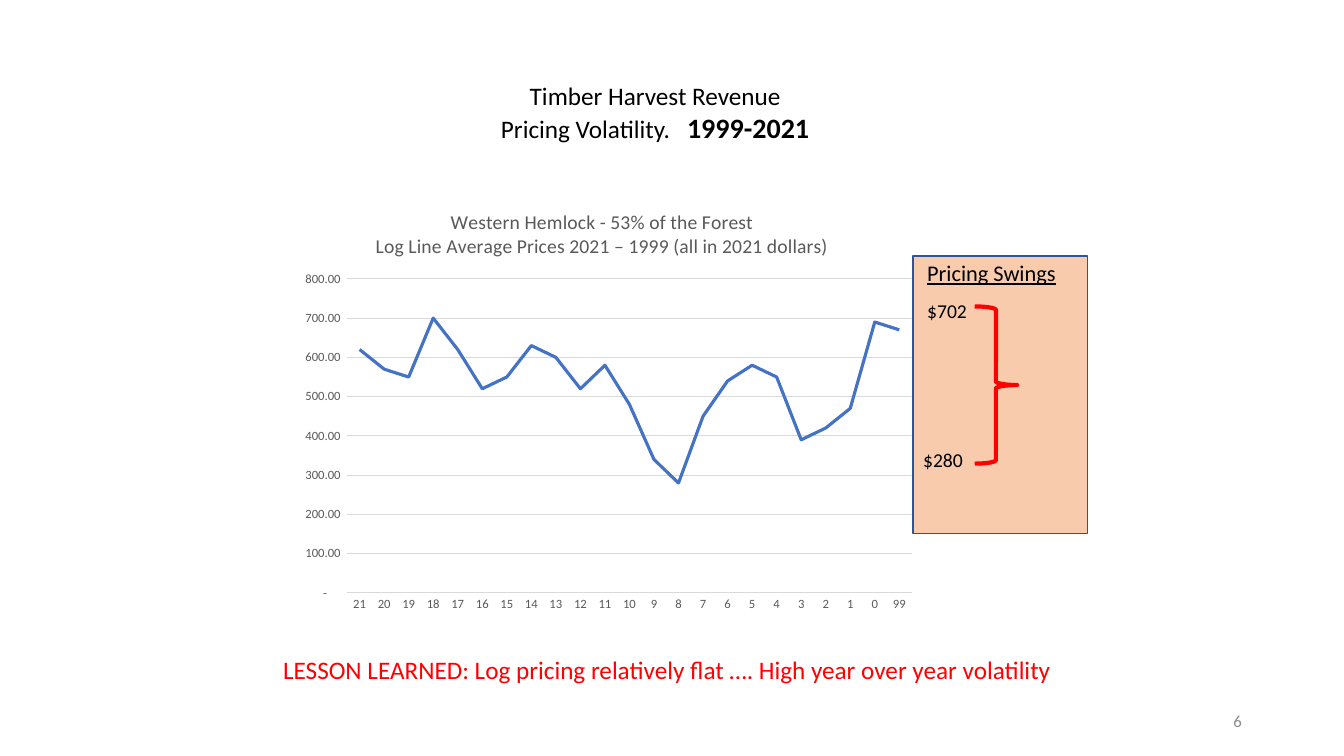
"""Build the timber price volatility slide."""
import pptx
import pptx.chart.data
import pptx.dml.color
import pptx.enum.chart
import pptx.enum.dml
import pptx.enum.shapes
import pptx.enum.text
import pptx.oxml
import pptx.oxml.ns
import pptx.util

RGB = pptx.dml.color.RGBColor
BLACK = RGB(0x00, 0x00, 0x00)
RED = RGB(0xFF, 0x00, 0x00)
PEACH = RGB(0xF8, 0xCB, 0xAD)
NAVY = RGB(0x32, 0x54, 0x91)
BLUE = RGB(0x44, 0x72, 0xC4)
DARK_GRAY = RGB(0x59, 0x59, 0x59)
MID_GRAY = RGB(0x8C, 0x8C, 0x8C)
PALE_GRAY = RGB(0xD9, 0xD9, 0xD9)

FONT = "Calibri"
COLUMNS, ROWS = 160, 90
CELL = pptx.util.Inches(1) / 12
ALIGN = pptx.enum.text.PP_ALIGN
ANCHOR = pptx.enum.text.MSO_ANCHOR
SHAPE = pptx.enum.shapes.MSO_SHAPE

TITLE = ["Timber Harvest Revenue", "Pricing Volatility."]
TITLE_YEARS = "1999-2021"
TITLE_AT = (32.4, 9, 91.2, 8.88)

CHART_TITLE = ["Western Hemlock - 53% of the Forest",
               "Log Line Average Prices 2021 – 1999 (all in 2021 dollars)"]
CHART_AT = (34.56, 22.44, 75.48, 51.24)
PLOT_SHARE = {"x": 0.09, "y": 0.21, "w": 0.89, "h": 0.73}
CHART_TITLE_SHARE = {"x": 0.13, "y": 0.04}
YEARS = [str(year % 100) for year in range(2021, 1998, -1)]
PRICES = [620, 570, 550, 700, 620, 520, 550, 630, 600, 520, 580, 480,
          340, 280, 450, 540, 580, 550, 390, 420, 470, 690, 670]
PRICE_FORMAT = '_(* #,##0.00_);_(* \\(#,##0.00\\);_(* "-"??_);_(@_)'

BOX_AT = (108.72, 30.48, 20.76, 33)
BRACE_AT = (116.04, 36.48, 5.04, 18.72)

LABELS = [
    ("$702", (109.2, 35.04, 7.2, 4.08), 14, BLACK, False),
    ("$280", (108.72, 52.68, 7.2, 4.08), 14, BLACK, False),
    ("Pricing Swings", (109.2, 30.24, 17.88, 4.44), 16, BLACK, True),
    ("LESSON LEARNED: Log pricing relatively flat …. High year over year volatility",
     (32.52, 77.28, 94.92, 4.8), 18, RED, False),
]
SLIDE_NUMBER = "6"
NUMBER_AT = (113.04, 83.4, 36, 4.8)


def place(at):
    return [round(n * CELL) for n in at]


def style(font, size, color):
    font.name, font.size = FONT, pptx.util.Pt(size)
    font.color.rgb = color


def add_title(slide):
    sp = slide.shapes.title
    sp.left, sp.top, sp.width, sp.height = place(TITLE_AT)
    tf = sp.text_frame
    tf.vertical_anchor = ANCHOR.TOP
    tf.auto_size = pptx.enum.text.MSO_AUTO_SIZE.NONE
    tf.text = "\n".join(TITLE)
    for p in tf.paragraphs:
        p.alignment = ALIGN.CENTER
        style(p.font, 18, BLACK)
    gap = p.add_run()
    gap.text = " "
    gap.font._element.set("spc", "800")
    r = p.add_run()
    r.text = TITLE_YEARS
    r.font.size, r.font.bold = pptx.util.Pt(20), True


def add_label(slide, text, at, size, color, underline=False):
    tf = slide.shapes.add_textbox(*place(at)).text_frame
    p = tf.paragraphs[0]
    p.text = text
    style(p.font, size, color)
    if underline:
        p.font.underline = True
    return tf


def set_layout(element, shares, target=None):
    old = element.find(pptx.oxml.ns.qn("c:layout"))
    if old is not None:
        element.remove(old)
    inner = f'<c:layoutTarget val="{target}"/>' if target else ""
    modes = "".join(f'<c:{k}Mode val="edge"/>' for k in shares if k in "xy")
    values = "".join(f'<c:{k} val="{v}"/>' for k, v in shares.items())
    return pptx.oxml.parse_xml(
        f'<c:layout {pptx.oxml.ns.nsdecls("c")}><c:manualLayout>'
        f'{inner}{modes}{values}</c:manualLayout></c:layout>')


def add_price_chart(slide):
    data = pptx.chart.data.CategoryChartData(number_format="General")
    data.categories = YEARS
    data.add_series("Series 1", PRICES)
    chart = slide.shapes.add_chart(
        pptx.enum.chart.XL_CHART_TYPE.LINE, *place(CHART_AT), data).chart
    chart.has_legend = False
    style(chart.font, 10, BLACK)
    chart.has_title = True
    tf = chart.chart_title.text_frame
    tf.text = "\n".join(CHART_TITLE)
    for p in tf.paragraphs:
        style(p.font, 14, DARK_GRAY)
        p.font.bold = False
    chart.chart_title.include_in_layout = False

    plot = chart.plots[0]
    plot.vary_by_categories = False
    series = plot.series[0]
    series.smooth = False
    series.marker.style = pptx.enum.chart.XL_MARKER_STYLE.NONE
    series.format.line.color.rgb = BLUE
    series.format.line.width = pptx.util.Pt(2.25)

    years, prices = chart.category_axis, chart.value_axis
    for axis in (years, prices):
        axis.major_tick_mark = pptx.enum.chart.XL_TICK_MARK.NONE
        axis.minor_tick_mark = pptx.enum.chart.XL_TICK_MARK.NONE
        style(axis.tick_labels.font, 9, DARK_GRAY)
    prices.minimum_scale, prices.maximum_scale, prices.major_unit = 0, 800, 100
    prices.tick_labels.number_format = PRICE_FORMAT
    prices.tick_labels.number_format_is_linked = False
    prices.format.line.fill.background()
    for line in (years.format.line, prices.major_gridlines.format.line):
        line.color.rgb = PALE_GRAY
        line.width = pptx.util.Pt(0.75)

    root = chart.element
    qn = pptx.oxml.ns.qn
    area = next(root.iter(qn("c:plotArea")))
    area.insert(0, set_layout(area, PLOT_SHARE, "inner"))
    title = next(root.iter(qn("c:title")))
    title.insert(1, set_layout(title, CHART_TITLE_SHARE))
    root.find(qn("c:txPr")).addprevious(pptx.oxml.parse_xml(
        f'<c:spPr {pptx.oxml.ns.nsdecls("c", "a")}><a:noFill/>'
        '<a:ln><a:noFill/></a:ln></c:spPr>'))


def add_outlined(slide, kind, at, color, width):
    sp = slide.shapes.add_shape(kind, *place(at))
    sp.shadow.inherit = False
    sp.fill.background()
    sp.line.color.rgb = color
    sp.line.width = pptx.util.Pt(width)
    return sp


def main():
    prs = pptx.Presentation()
    prs.slide_width, prs.slide_height = place((COLUMNS, ROWS))
    slide = prs.slides.add_slide(prs.slide_layouts[5])
    add_title(slide)
    box = add_outlined(slide, SHAPE.RECTANGLE, BOX_AT, NAVY, 1)
    box.fill.solid()
    box.fill.fore_color.rgb = PEACH
    add_outlined(slide, SHAPE.RIGHT_BRACE, BRACE_AT, RED, 3)
    for label in LABELS:
        add_label(slide, *label).word_wrap = False
    add_price_chart(slide)
    tf = add_label(slide, SLIDE_NUMBER, NUMBER_AT, 12, MID_GRAY)
    tf.word_wrap = True
    tf.vertical_anchor = ANCHOR.MIDDLE
    tf.paragraphs[0].alignment = ALIGN.RIGHT
    prs.save("out.pptx")


if __name__ == "__main__":
    main()
